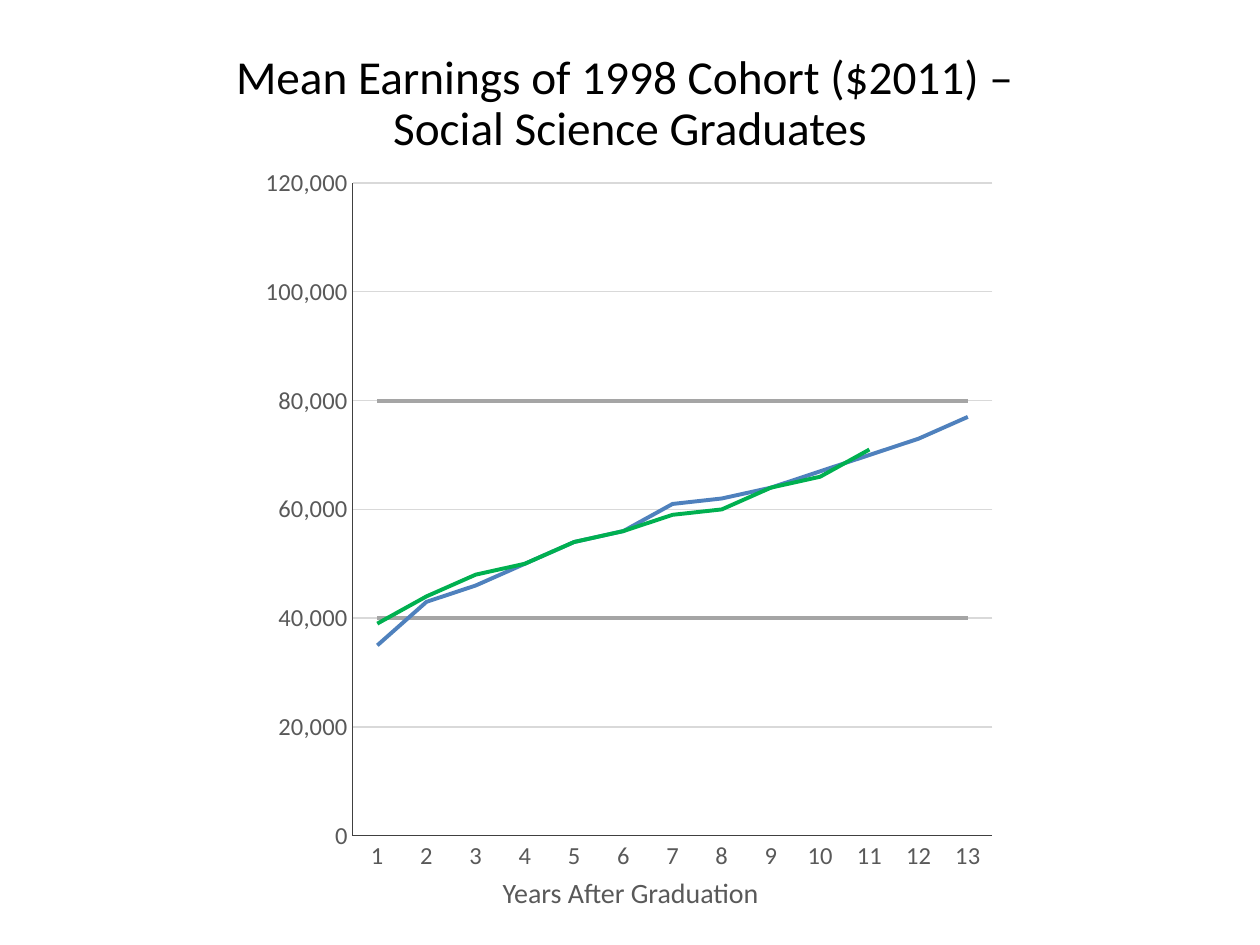
from lxml import etree
from pptx import Presentation
from pptx.chart.data import CategoryChartData
from pptx.dml.color import RGBColor
from pptx.enum.chart import XL_CHART_TYPE, XL_TICK_MARK
from pptx.enum.text import MSO_ANCHOR, MSO_AUTO_SIZE, PP_ALIGN
from pptx.util import Inches, Pt

LINE_CHART = XL_CHART_TYPE.LINE
NO_TICK = XL_TICK_MARK.NONE
MIDDLE, TOP = MSO_ANCHOR.MIDDLE, MSO_ANCHOR.TOP
CENTER = PP_ALIGN.CENTER
NO_FIT = MSO_AUTO_SIZE.NONE
FIT_SHAPE = MSO_AUTO_SIZE.SHAPE_TO_FIT_TEXT

TITLE = "Mean Earnings of 1998 Cohort ($2011) – \vSocial Science Graduates"
AXIS_CAPTION = "Years After Graduation"
YEARS = range(1, 14)
SERIES = [
    ("Series 1", "A5A5A5", [40000] * len(YEARS)),
    ("Series 2", "A5A5A5", [80000] * len(YEARS)),
    ("Series 3", "4F81BD", [35000, 43000, 46000, 50000, 54000, 56000, 61000,
                            62000, 64000, 67000, 70000, 73000, 77000]),
    ("Series 4", "00B050", [39000, 44000, 48000, 50000, 54000, 56000, 59000,
                            60000, 64000, 66000, 71000, None, None]),
]
FONT = "Calibri"
WIDTH, HEIGHT = 10, 7.5
TITLE_AREA = (0.69, 0.34, 8.62, 0.57)
CHART_AREA = (2, 1.22, 6.01, 5.81)
CAPTION_AREA = (3.87, 6.9, 2.27, 0.37)
PLOT_SHARES = {"x": 0.133, "y": 0.04, "w": 0.845, "h": 0.892}
VALUE_AXIS = {"minimum_scale": 0, "maximum_scale": 120000, "major_unit": 20000,
              "has_major_gridlines": True}
TITLE_FRAME = {"vertical_anchor": MIDDLE, "word_wrap": True, "auto_size": NO_FIT,
               "margin_top": Inches(0.46), "margin_bottom": Inches(0.05)}
CAPTION_FRAME = {"vertical_anchor": TOP, "word_wrap": False, "auto_size": FIT_SHAPE}


def color(value):
    return RGBColor.from_string(value)


def set_all(target, values):
    for name, value in values.items():
        setattr(target, name, value)


def inches(area):
    return [Inches(value) for value in area]


def set_font(font, size, shade):
    set_all(font, {"name": FONT, "size": Pt(size), "bold": False})
    font.color.rgb = color(shade)


def set_line(line, shade, width):
    line.color.rgb = color(shade)
    line.width = Pt(width)


def write(box, text, size, shade, frame_format, spacing):
    frame = box.text_frame
    set_all(frame, frame_format)
    frame.text = text
    para = frame.paragraphs[0]
    set_all(para, {"alignment": CENTER, "line_spacing": spacing})
    for span in para.runs:
        set_font(span.font, size, shade)


def place_plot(chart):
    plot_area = chart.plots[0]._element.getparent()
    namespace = etree.QName(plot_area).namespace
    for old in plot_area.findall(f"{{{namespace}}}layout"):
        plot_area.remove(old)
    layout = etree.Element(f"{{{namespace}}}layout")
    manual = etree.SubElement(layout, f"{{{namespace}}}manualLayout")
    settings = {"layoutTarget": "inner", "xMode": "edge", "yMode": "edge", **PLOT_SHARES}
    for name, value in settings.items():
        etree.SubElement(manual, f"{{{namespace}}}{name}").set("val", str(value))
    plot_area.insert(0, layout)


def add_earnings_chart(page):
    data = CategoryChartData(number_format="#,##0")
    data.categories = [str(year) for year in YEARS]
    for name, _, values in SERIES:
        data.add_series(name, values)
    chart = page.shapes.add_chart(LINE_CHART, *inches(CHART_AREA), data).chart
    set_all(chart, {"has_legend": False, "has_title": False})
    set_font(chart.font, 10, "000000")
    chart.plots[0].vary_by_categories = False
    for series, (_, shade, _) in zip(chart.plots[0].series, SERIES):
        series.smooth = False
        set_line(series.format.line, shade, 2.25)
    for axis in (chart.category_axis, chart.value_axis):
        set_all(axis, {"major_tick_mark": NO_TICK, "minor_tick_mark": NO_TICK})
        set_font(axis.tick_labels.font, 14, "595959")
        set_line(axis.format.line, "404040", 0.75)
    set_all(chart.value_axis, VALUE_AXIS)
    set_all(chart.value_axis.tick_labels,
            {"number_format": "#,##0", "number_format_is_linked": False})
    set_line(chart.value_axis.major_gridlines.format.line, "D9D9D9", 0.75)
    place_plot(chart)


def main():
    deck = Presentation()
    set_all(deck, {"slide_width": Inches(WIDTH), "slide_height": Inches(HEIGHT)})
    page = deck.slides.add_slide(deck.slide_layouts[5])
    title = page.shapes.title
    set_all(title, dict(zip(("left", "top", "width", "height"), inches(TITLE_AREA))))
    write(title, TITLE, 27, "000000", TITLE_FRAME, 0.9)
    add_earnings_chart(page)
    caption = page.shapes.add_textbox(*inches(CAPTION_AREA))
    write(caption, AXIS_CAPTION, 16, "595959", CAPTION_FRAME, 1.0)
    deck.save("out.pptx")


if __name__ == "__main__":
    main()
